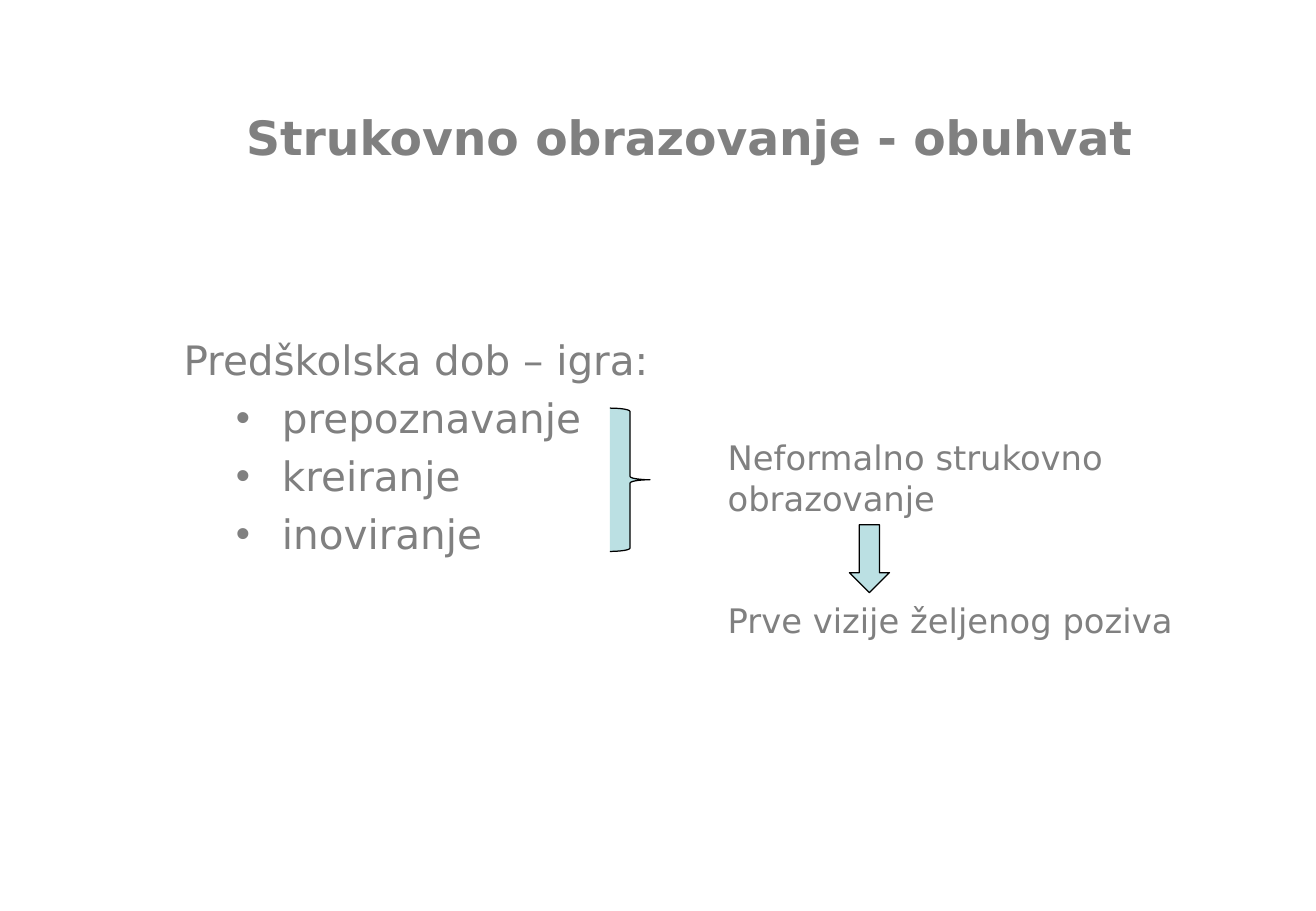
from lxml import etree
from pptx import Presentation
from pptx.dml.color import RGBColor
from pptx.enum.shapes import MSO_SHAPE
from pptx.enum.text import MSO_ANCHOR, MSO_AUTO_SIZE, PP_ALIGN
from pptx.oxml.ns import qn
from pptx.util import Inches, Pt

RIGHT_BRACE = MSO_SHAPE.RIGHT_BRACE
DOWN_ARROW = MSO_SHAPE.DOWN_ARROW
TOP = MSO_ANCHOR.TOP
CENTER = PP_ALIGN.CENTER
LEFT = PP_ALIGN.LEFT
NO_AUTOFIT = MSO_AUTO_SIZE.NONE

FONT = "DejaVu Sans"
GREY = "808080"
PALE_TEAL = "BBE0E3"
BLACK = "000000"

OUTCOME_LEFT, OUTCOME_WIDTH = 5.89, 3.94


def rgb(hex_color):
    return RGBColor.from_string(hex_color)


def place(shape, left, top, width, height):
    shape.left, shape.top = Inches(left), Inches(top)
    shape.width, shape.height = Inches(width), Inches(height)


def prepare_frame(shape):
    frame = shape.text_frame
    frame.word_wrap = True
    frame.auto_size = NO_AUTOFIT
    frame.vertical_anchor = TOP
    return frame


def format_paragraph(paragraph, size, bold=False, align=LEFT):
    paragraph.alignment = align
    font = paragraph.font
    font.name = FONT
    font.size = Pt(size)
    font.bold = bold
    font.color.rgb = rgb(GREY)


def set_bullet(paragraph, margin, indent=0, bullet=None):
    """Set the indents in inches and show the bullet, if there is one."""
    properties = paragraph._p.get_or_add_pPr()
    properties.set("marL", str(Inches(margin)))
    properties.set("indent", str(Inches(indent)))
    if bullet:
        etree.SubElement(properties, qn("a:buChar"), char=bullet)
    else:
        etree.SubElement(properties, qn("a:buNone"))


def fill_title(title, text):
    place(title, 1.42, 0.84, 8.5, 0.5)
    frame = prepare_frame(title)
    frame.text = text
    format_paragraph(frame.paragraphs[0], 28, bold=True, align=CENTER)


def fill_list(body, heading, items):
    place(body, 1.32, 2.31, 5.59, 2.36)
    frame = prepare_frame(body)
    frame.text = heading
    first = frame.paragraphs[0]
    set_bullet(first, 0.09)
    first.line_spacing = 2.0
    first.space_before = Pt(0)
    format_paragraph(first, 24)
    for item in items:
        paragraph = frame.add_paragraph()
        paragraph.text = item
        paragraph.level = 1
        set_bullet(paragraph, 0.9, -0.38, "•")
        paragraph.space_before = Pt(5.6)
        format_paragraph(paragraph, 24)


def add_outcome(slide, text, top, height):
    box = slide.shapes.add_textbox(
        Inches(OUTCOME_LEFT), Inches(top), Inches(OUTCOME_WIDTH), Inches(height))
    frame = prepare_frame(box)
    frame.text = text
    format_paragraph(frame.paragraphs[0], 20)


def add_symbol(slide, preset, left, top, width, height):
    symbol = slide.shapes.add_shape(
        preset, Inches(left), Inches(top), Inches(width), Inches(height))
    symbol.shadow.inherit = False
    symbol.fill.solid()
    symbol.fill.fore_color.rgb = rgb(PALE_TEAL)
    symbol.line.color.rgb = rgb(BLACK)
    symbol.line.width = Pt(0.75)


def main():
    presentation = Presentation()
    presentation.slide_width = Inches(10.83)
    presentation.slide_height = Inches(7.5)
    slide = presentation.slides.add_slide(presentation.slide_layouts[1])

    fill_title(slide.shapes.title, "Strukovno obrazovanje - obuhvat")
    fill_list(slide.placeholders[1], "Predškolska dob – igra:",
              ["prepoznavanje", "kreiranje", "inoviranje"])
    add_symbol(slide, RIGHT_BRACE, 5.02, 3.36, 0.33, 1.18)
    add_outcome(slide, "Neformalno strukovno obrazovanje", 3.55, 0.77)
    add_symbol(slide, DOWN_ARROW, 6.99, 4.32, 0.33, 0.56)
    add_outcome(slide, "Prve vizije željenog poziva", 4.89, 0.44)

    presentation.save("out.pptx")


if __name__ == "__main__":
    main()
